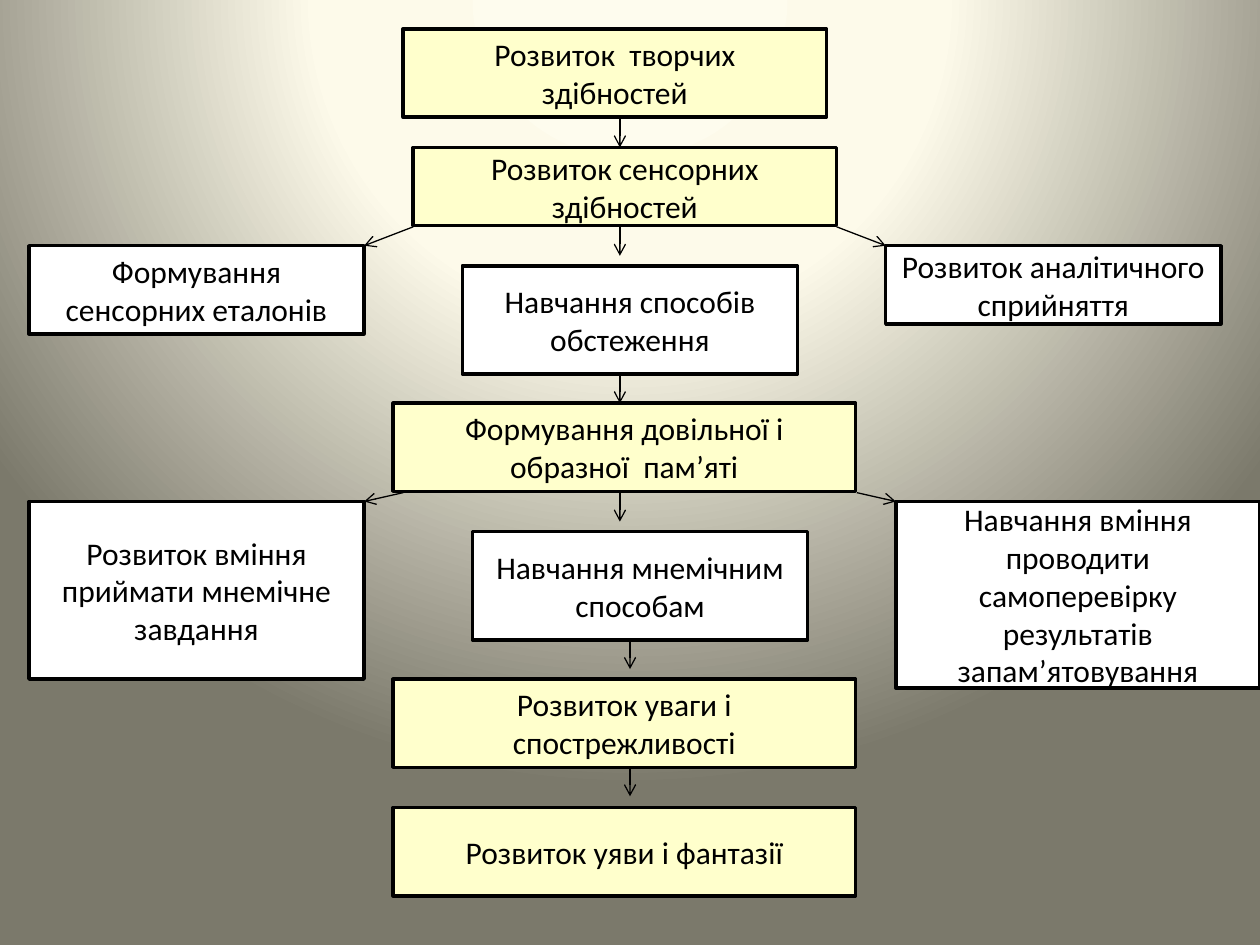
from pptx import Presentation
from pptx import util as u
from pptx.dml.color import RGBColor
from pptx.enum import shapes, text
from pptx.oxml import parse_xml
from pptx.oxml.ns import nsdecls, qn
from lxml import etree

COLORS = {
    "goal": "FFFFCC", "task": "FFFFFF", "ink": "000000",
    "glow": "FEFCEE", "cream": "FDFAEA", "edge": "7B796B",
}
ARROW_LENGTH = 0.23


def rgb(name):
    return RGBColor.from_string(COLORS[name])


def paint_background(slide):
    # Circular gradient centred above the slide
    stops = "".join(
        f'<a:gs pos="{pos * 1000}"><a:srgbClr val="{COLORS[name]}"/></a:gs>'
        for pos, name in ((0, "glow"), (40, "cream"), (100, "edge")))
    slide.element.cSld.insert(0, parse_xml(
        f'<p:bg {nsdecls("p", "a")}><p:bgPr><a:gradFill rotWithShape="1">'
        f'<a:gsLst>{stops}</a:gsLst><a:path path="circle">'
        '<a:fillToRect l="50000" t="-80000" r="50000" b="180000"/></a:path>'
        '</a:gradFill><a:effectLst/></p:bgPr></p:bg>'))


def add_step(slide, box, wording, kind):
    step = slide.shapes.add_shape(
        shapes.MSO_SHAPE.RECTANGLE, *(u.Inches(length) for length in box))
    step.shadow.inherit = False
    step.fill.solid()
    step.fill.fore_color.rgb = rgb(kind)
    step.line.color.rgb = rgb("ink")
    step.line.width = u.Pt(2)
    frame = step.text_frame
    frame.word_wrap = True
    frame.vertical_anchor = text.MSO_ANCHOR.MIDDLE
    frame.text = wording
    label = frame.paragraphs[0]
    label.alignment = text.PP_ALIGN.CENTER
    label.font.name = "Calibri"
    label.font.size = u.Pt(18)
    label.font.color.rgb = rgb("ink")


def add_arrow(slide, start, end):
    arrow = slide.shapes.add_connector(
        shapes.MSO_CONNECTOR.STRAIGHT,
        *(u.Inches(length) for length in (*start, *end)))
    arrow.line.color.rgb = rgb("ink")
    arrow.line.width = u.Pt(0.75)
    etree.SubElement(arrow.line._get_or_add_ln(), qn("a:tailEnd"), type="arrow")
    etree.SubElement(arrow._element.spPr, qn("a:effectLst"))


def draw_region(slide, origin, steps, down_arrows, side_arrows=()):
    """Place steps and arrows relative to the region's top left corner."""
    left, top = origin
    for (x, y, width, height), wording, kind in steps:
        add_step(slide, (left + x, top + y, width, height), wording, kind)
    for x, y in down_arrows:
        add_arrow(slide, (left + x, top + y), (left + x, top + y + ARROW_LENGTH))
    for (x1, y1), (x2, y2) in side_arrows:
        add_arrow(slide, (left + x1, top + y1), (left + x2, top + y2))


def draw_sensory(slide, origin):
    draw_region(slide, origin, [
        ((2.97, 0, 3.36, 0.7), "Розвиток  творчих\vздібностей", "goal"),
        ((3.05, 0.94, 3.36, 0.62), "Розвиток сенсорних здібностей", "goal"),
        ((0, 1.72, 2.66, 0.7), "Формування сенсорних еталонів", "task"),
        ((3.44, 1.88, 2.66, 0.86), "Навчання способів обстеження", "task"),
        ((6.8, 1.72, 2.66, 0.62), "Розвиток аналітичного сприйняття", "task"),
    ], [(4.69, 0.71), (4.69, 1.57), (4.69, 2.74)],
        [((3.05, 1.57), (2.66, 1.72)), ((6.41, 1.57), (6.8, 1.72))])


def draw_memory(slide, origin):
    draw_region(slide, origin, [
        ((2.89, 0, 3.67, 0.7), "Формування довільної і образної  пам’яті", "goal"),
        ((0, 0.78, 2.66, 1.41), "Розвиток вміння приймати мнемічне завдання", "task"),
        ((3.52, 1.02, 2.66, 0.86), "Навчання мнемічним способам", "task"),
        ((6.88, 0.78, 2.89, 1.48),
         "Навчання вміння проводити самоперевірку результатів запам’ятовування", "task"),
    ], [(4.69, 0.71), (4.77, 1.88)],
        [((2.97, 0.71), (2.66, 0.78)), ((6.57, 0.71), (6.88, 0.78))])


def draw_outcomes(slide, origin):
    outcomes = ["Розвиток уваги і спострежливості", "Розвиток уяви і фантазії"]
    draw_region(slide, origin, [
        ((2.89, 1.02 * row, 3.67, 0.7), wording, "goal")
        for row, wording in enumerate(outcomes)
    ], [(4.77, 0.7)])


def main():
    deck = Presentation()
    deck.slide_width, deck.slide_height = u.Inches(10), u.Inches(7.5)
    slide = deck.slides.add_slide(deck.slide_layouts[6])
    paint_background(slide)
    margin = 0.23
    draw_sensory(slide, (margin, 0.23))
    draw_memory(slide, (margin, 3.2))
    draw_outcomes(slide, (margin, 5.39))
    deck.save("out.pptx")


if __name__ == "__main__":
    main()
